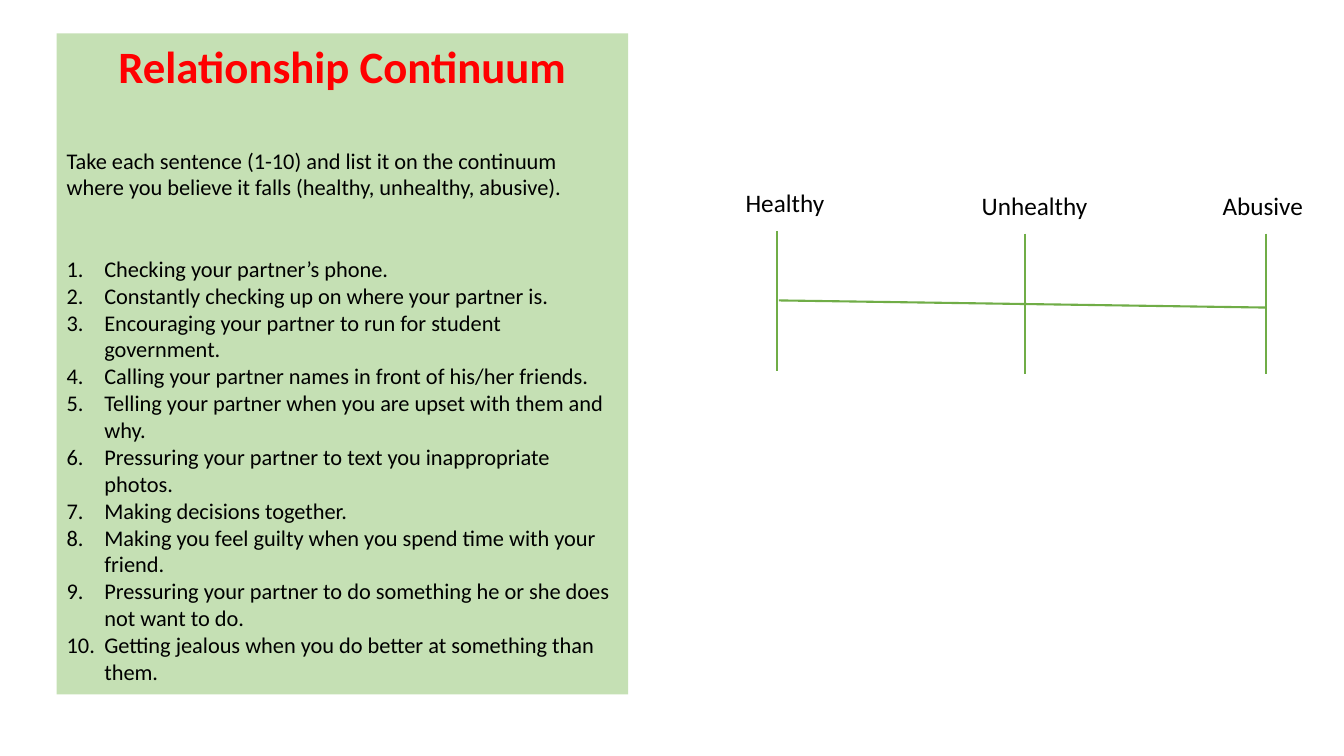
from lxml import etree
from pptx import Presentation
from pptx.dml.color import RGBColor
from pptx.enum.shapes import MSO_CONNECTOR, MSO_SHAPE
from pptx.enum.text import MSO_ANCHOR, PP_ALIGN
from pptx.oxml.ns import qn
from pptx.util import Cm, Pt

RECTANGLE = MSO_SHAPE.RECTANGLE
STRAIGHT = MSO_CONNECTOR.STRAIGHT
TOP = MSO_ANCHOR.TOP
LEFT = PP_ALIGN.LEFT
CENTER = PP_ALIGN.CENTER

PALE_GREEN = RGBColor(0xC5, 0xE0, 0xB4)
GREEN = RGBColor(0x70, 0xAD, 0x47)
RED = RGBColor(0xFF, 0x00, 0x00)
BLACK = RGBColor(0x00, 0x00, 0x00)

FONT = "Calibri"
TITLE = "Relationship Continuum"
INSTRUCTION = (
    "Take each sentence (1-10) and list it on the continuum "
    "where you believe it falls (healthy, unhealthy, abusive)."
)
SENTENCES = [
    "Checking your partner’s phone.",
    "Constantly checking up on where your partner is.",
    "Encouraging your partner to run for student government.",
    "Calling your partner names in front of his/her friends.",
    "Telling your partner when you are upset with them and why.",
    "Pressuring your partner to text you inappropriate photos.",
    "Making decisions together.",
    "Making you feel guilty when you spend time with your friend.",
    "Pressuring your partner to do something he or she does not want to do.",
    "Getting jealous when you do better at something than them.",
]
TICK_HEIGHT = 3.53
LABEL_RISE = 1.22
MARKS = [
    ("Healthy", 18.54, 4.57, 19.58, 5.82),
    ("Unhealthy", 24.49, 5.51, 25.83, 5.89),
    ("Abusive", 30.56, 3.3, 31.9, 5.89),
]


def add_text(paragraph, text, size, color=BLACK, bold=False):
    run = paragraph.add_run()
    run.text = text
    run.font.name = FONT
    run.font.size = Pt(size)
    run.font.bold = bold
    run.font.color.rgb = color


def number_paragraph(paragraph):
    properties = paragraph._p.get_or_add_pPr()
    properties.set("marL", str(Cm(0.95)))
    properties.set("indent", str(-Cm(0.95)))
    numbering = etree.SubElement(properties, qn("a:buAutoNum"))
    numbering.set("type", "arabicPeriod")


def add_panel(slide):
    panel = slide.shapes.add_shape(RECTANGLE, Cm(1.43), Cm(0.84), Cm(14.4), Cm(16.66))
    panel.shadow.inherit = False
    panel.fill.solid()
    panel.fill.fore_color.rgb = PALE_GREEN
    panel.line.fill.background()
    frame = panel.text_frame
    frame.word_wrap = True
    frame.vertical_anchor = TOP

    title = frame.paragraphs[0]
    title.alignment = CENTER
    add_text(title, TITLE, 32, RED, True)

    instruction = frame.add_paragraph()
    instruction.alignment = LEFT
    instruction.space_before = Pt(39)
    add_text(instruction, INSTRUCTION, 16)

    for index, sentence in enumerate(SENTENCES):
        paragraph = frame.add_paragraph()
        paragraph.alignment = LEFT
        paragraph.space_before = Pt(39 if index == 0 else 0)
        number_paragraph(paragraph)
        add_text(paragraph, sentence, 16)


def add_line(slide, start_x, start_y, end_x, end_y):
    line = slide.shapes.add_connector(
        STRAIGHT, Cm(start_x), Cm(start_y), Cm(end_x), Cm(end_y)
    )
    line.line.color.rgb = GREEN
    line.line.width = Pt(1.5)
    etree.SubElement(line._element.spPr, qn("a:effectLst"))


def add_label(slide, text, left, top, width):
    label = slide.shapes.add_textbox(Cm(left), Cm(top), Cm(width), Cm(0.86))
    frame = label.text_frame
    frame.word_wrap = True
    add_text(frame.paragraphs[0], text, 18)


def main():
    presentation = Presentation()
    presentation.slide_width = Cm(33.87)
    presentation.slide_height = Cm(19.05)
    slide = presentation.slides.add_slide(presentation.slide_layouts[6])

    add_panel(slide)
    add_line(slide, 19.63, 7.57, 31.9, 7.75)
    for text, label_left, label_width, tick_x, tick_top in MARKS:
        add_line(slide, tick_x, tick_top, tick_x, tick_top + TICK_HEIGHT)
        add_label(slide, text, label_left, tick_top - LABEL_RISE, label_width)

    presentation.save("out.pptx")


if __name__ == "__main__":
    main()
